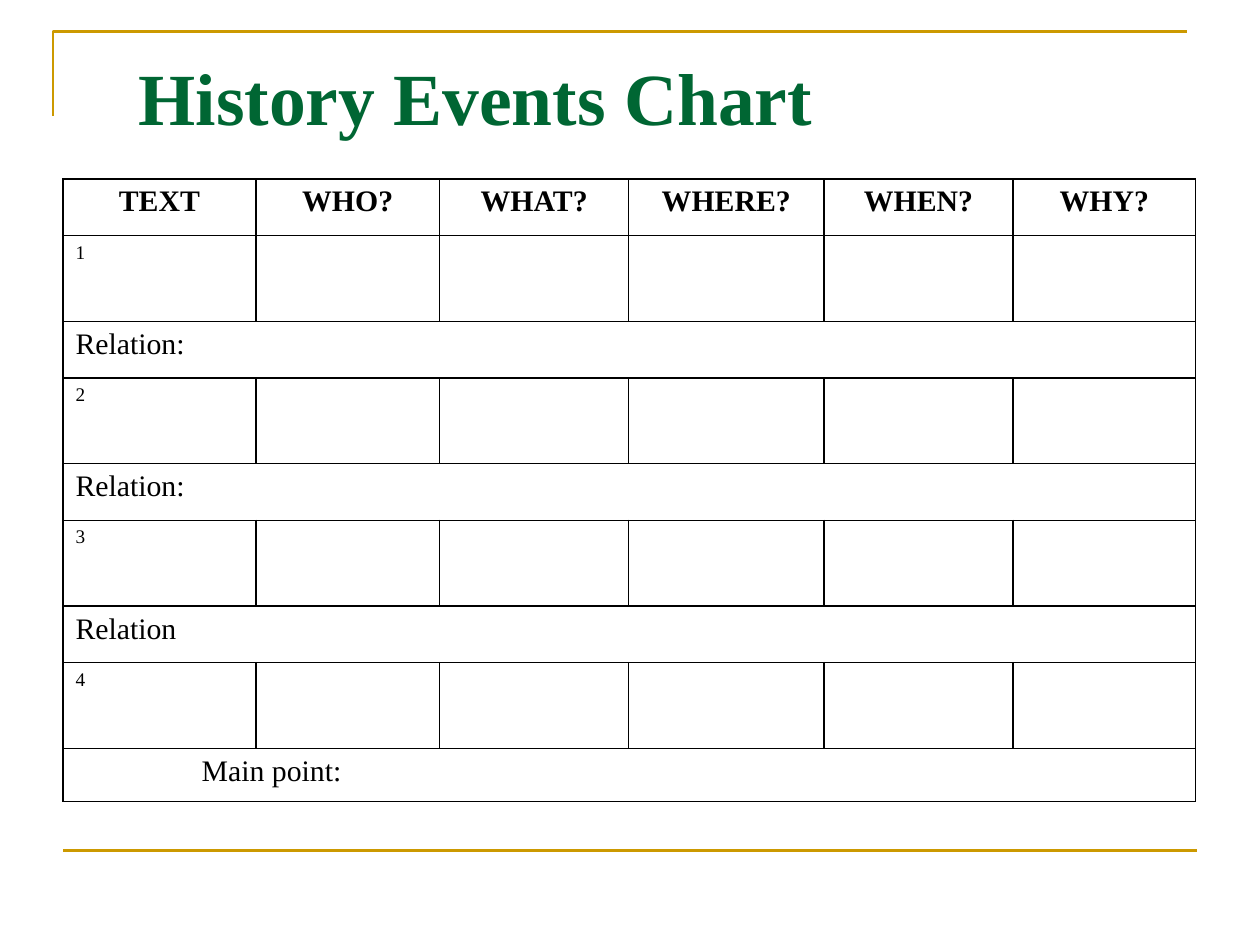
from lxml import etree
from pptx import Presentation
from pptx.dml.color import RGBColor
from pptx.enum.shapes import MSO_CONNECTOR
from pptx.enum.text import MSO_ANCHOR, PP_ALIGN
from pptx.oxml.ns import qn
from pptx.util import Inches, Pt

CENTER, LEFT = PP_ALIGN.CENTER, PP_ALIGN.LEFT
MIDDLE = MSO_ANCHOR.MIDDLE
STRAIGHT = MSO_CONNECTOR.STRAIGHT
FONT = "Times New Roman"
GOLD, GREEN, BLACK = "CC9900", "006633", "000000"
HEADERS = ["TEXT", "WHO?", "WHAT?", "WHERE?", "WHEN?", "WHY?"]
FOOTERS = ["Relation:", "Relation:", "Relation", "Main point:"]
COL_WIDTHS = [1.53, 1.46, 1.5, 1.55, 1.5, 1.45]
HEADER_H, EVENT_H, MAIN_H = 0.45, 0.68, 0.42
HANGING = 0.38


def rgb(color):
    """Turn a hex string into a colour."""
    return RGBColor.from_string(color)


def add_run(p, text, size, color=BLACK, bold=False):
    """Add one formatted run to a paragraph."""
    r = p.add_run()
    r.text = text
    r.font.name, r.font.size, r.font.bold = FONT, Pt(size), bold
    r.font.color.rgb = rgb(color)


def add_frame(s, x, y, w, h):
    """Draw the gold corner and the gold rule at the foot of the box."""
    builder = s.shapes.build_freeform(Inches(x - 0.08), Inches(y + 0.67))
    builder.add_line_segments(
        [(Inches(x - 0.08), Inches(y)), (Inches(x + w - 0.08), Inches(y))], close=False)
    corner = builder.convert_to_shape()
    corner.fill.background()
    corner.shadow.inherit = False
    rule = s.shapes.add_connector(
        STRAIGHT, Inches(x), Inches(y + h), Inches(x + w), Inches(y + h))
    etree.SubElement(rule._element.spPr, qn("a:effectLst"))
    for sp in (corner, rule):
        sp.line.color.rgb = rgb(GOLD)
        sp.line.width = Pt(1.5)


def add_title(s, x, y, w, h):
    """Place and format the title placeholder."""
    sp = s.shapes.title
    sp.left, sp.top, sp.width, sp.height = (Inches(v) for v in (x, y, w, h))
    tf = sp.text_frame
    tf.vertical_anchor = MIDDLE
    p = tf.paragraphs[0]
    p.alignment = LEFT
    p.line_spacing = 0.9
    add_run(p, "History Events Chart", 42, GREEN, True)


def style_cell(cell):
    """Give a cell thin black borders and no fill."""
    tc_pr = cell._tc.get_or_add_tcPr()
    for side in ("a:lnL", "a:lnR", "a:lnT", "a:lnB"):
        ln = etree.SubElement(tc_pr, qn(side), w=str(Pt(1)))
        fill = etree.SubElement(ln, qn("a:solidFill"))
        etree.SubElement(fill, qn("a:srgbClr"), val=BLACK)
    cell.fill.background()


def fill_cell(cell, text, size, align=LEFT, bold=False, margin=HANGING, indent=-HANGING):
    """Write one indented paragraph into a cell."""
    p = cell.text_frame.paragraphs[0]
    p.alignment = align
    p_pr = p._p.get_or_add_pPr()
    p_pr.set("marL", str(Inches(margin)))
    p_pr.set("indent", str(Inches(indent)))
    add_run(p, text, size, bold=bold)


def add_events_table(s, x, y, w):
    """Build the table: a header, then an event row and a merged row per event."""
    heights = [HEADER_H] + [EVENT_H, HEADER_H] * len(FOOTERS)
    heights[-1] = MAIN_H
    table = s.shapes.add_table(len(heights), len(HEADERS), Inches(x), Inches(y),
                               Inches(w), Inches(sum(heights))).table
    table.first_row = table.horz_banding = False
    for column, width in zip(table.columns, COL_WIDTHS):
        column.width = Inches(width)
    for row, height in zip(table.rows, heights):
        row.height = Inches(height)
    for cell in table.iter_cells():
        style_cell(cell)
    for col, header in enumerate(HEADERS):
        fill_cell(table.cell(0, col), header, 17, CENTER, True)
    for i, footer in enumerate(FOOTERS):
        fill_cell(table.cell(2 * i + 1, 0), str(i + 1), 11)
        merged = table.cell(2 * i + 2, 0)
        merged.merge(table.cell(2 * i + 2, len(HEADERS) - 1))
        if i == len(FOOTERS) - 1:
            fill_cell(merged, footer, 17, margin=1, indent=0)
        else:
            fill_cell(merged, footer, 17)


def main():
    """Build and save the slide."""
    prs = Presentation()
    prs.slide_width, prs.slide_height = Inches(10), Inches(7.5)
    s = prs.slides.add_slide(prs.slide_layouts[5])
    add_frame(s, 0.5, 0.25, 9, 6.5)
    add_title(s, 1, 0.3, 8.5, 1.01)
    add_events_table(s, 0.5, 1.42, 9)
    prs.save("out.pptx")


if __name__ == "__main__":
    main()
